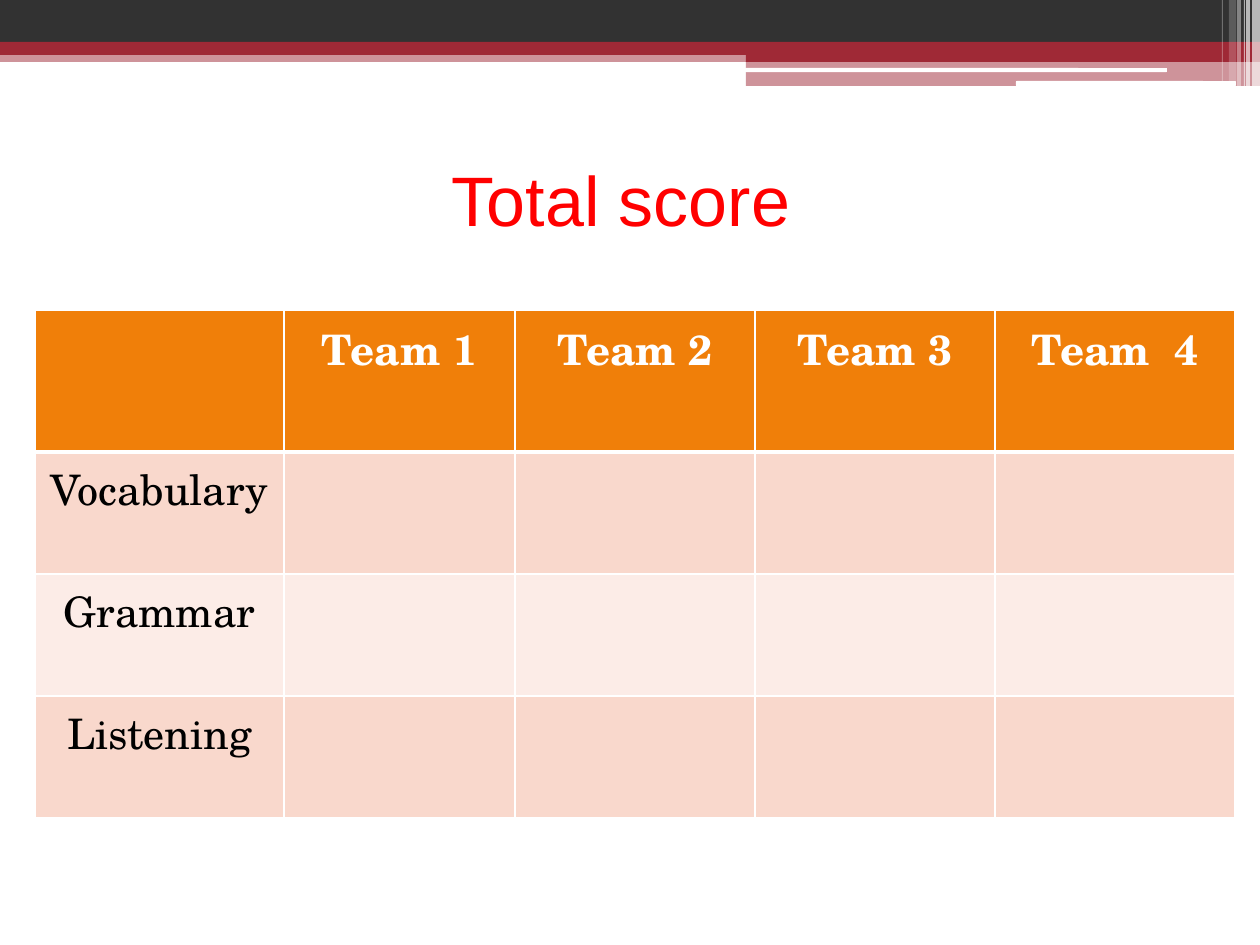
"""Build the total score slide with its banner and team table."""
from typing import NamedTuple

from lxml.etree import SubElement
from pptx import Presentation
from pptx.dml.color import RGBColor
from pptx.enum.shapes import MSO_SHAPE as Preset
from pptx.enum.text import MSO_ANCHOR as Anchor, PP_ALIGN as Align
from pptx.oxml.ns import qn
from pptx.util import Emu, Pt

COLORS = {
    "dark": "323232", "crimson": "9F2936", "white": "FFFFFF", "black": "000000",
    "red": "FF0000", "orange": "F07F09", "peach": "F9D8CC", "blush": "FCECE7",
}
TABLE_FONT = "TeX Gyre Schola"
COLUMN_WIDTHS = [249, 231, 240, 240, 240]
ROW_HEIGHTS = [142, 122, 122, 122]
TEAMS = ["", "Team 1", "Team 2", "Team 3", "Team  4"]
SKILLS = ["Vocabulary", "Grammar", "Listening"]


class Band(NamedTuple):
    left: int
    top: int
    width: int
    height: int
    color: str
    opacity: int = 100
    preset: Preset = Preset.RECTANGLE


BANNER = [
    Band(0, 50, 1260, 12, "crimson", 50),
    Band(0, 0, 1260, 43, "dark"),
    Band(0, 42, 1260, 13, "crimson"),
    Band(746, 49, 514, 13, "crimson"),
    Band(746, 61, 514, 25, "crimson", 50),
    Band(745, 68, 422, 4, "white", preset=Preset.ROUNDED_RECTANGLE),
    Band(1016, 81, 220, 5, "white", preset=Preset.ROUNDED_RECTANGLE),
    Band(1252, 0, 8, 86, "white", 65),
    Band(1246, 0, 4, 86, "white", 65),
    Band(1244, 0, 1, 86, "white", 60),
    Band(1237, 0, 4, 86, "white", 40),
    Band(1229, 0, 7, 81, "white", 20),
    Band(1222, 0, 1, 81, "white", 30),
]


def px(length: int) -> Emu:
    return Emu(round(length * 914400 / 126))


def rgb(color: str) -> RGBColor:
    return RGBColor.from_string(COLORS[color])


def draw_band(slide, band: Band) -> None:
    shape = slide.shapes.add_shape(band.preset, *map(px, band[:4]))
    shape.shadow.inherit = False
    shape.line.fill.background()
    shape.fill.solid()
    shape.fill.fore_color.rgb = rgb(band.color)
    if band.opacity < 100:
        color = shape.fill._xPr.find(f".//{qn('a:srgbClr')}")
        SubElement(color, qn("a:alpha"), val=str(band.opacity * 1000))


def write(frame, text: str, font: str, size: int, color: str, bold: bool) -> None:
    frame.text = text
    paragraph = frame.paragraphs[0]
    paragraph.alignment = Align.CENTER
    for run in paragraph.runs:
        run.font.name = font
        run.font.size = Pt(size)
        run.font.bold = bold
        run.font.color.rgb = rgb(color)


def draw_borders(cell, bottom: int, top: int) -> None:
    properties = cell._tc.get_or_add_tcPr()
    for side, width in (("L", 1), ("R", 1), ("T", top), ("B", bottom)):
        border = SubElement(properties, qn(f"a:ln{side}"), w=str(Pt(width)))
        fill = SubElement(border, qn("a:solidFill"))
        SubElement(fill, qn("a:srgbClr"), val=COLORS["white"])


def draw_scores(slide) -> None:
    rows = [TEAMS] + [[skill] + [""] * (len(TEAMS) - 1) for skill in SKILLS]
    scores = slide.shapes.add_table(
        len(rows), len(TEAMS), px(35), px(310),
        px(sum(COLUMN_WIDTHS)), px(sum(ROW_HEIGHTS)),
    ).table
    for column, width in zip(scores.columns, COLUMN_WIDTHS):
        column.width = px(width)
    for index, (row, height) in enumerate(zip(scores.rows, ROW_HEIGHTS)):
        row.height = px(height)
        heading = index == 0
        background = "orange" if heading else "peach" if index % 2 else "blush"
        for cell, text in zip(row.cells, rows[index]):
            draw_borders(cell, 3 if heading else 1, 3 if index == 1 else 1)
            cell.fill.solid()
            cell.fill.fore_color.rgb = rgb(background)
            write(cell.text_frame, text, TABLE_FONT, 24,
                  "white" if heading else "black", heading)


def main() -> None:
    deck = Presentation()
    deck.slide_width, deck.slide_height = px(1260), px(945)
    slide = deck.slides.add_slide(deck.slide_layouts[5])
    for band in BANNER:
        draw_band(slide, band)
    title = slide.shapes.title
    title.left, title.top, title.width, title.height = map(px, (54, 125, 1134, 147))
    title.text_frame.vertical_anchor = Anchor.MIDDLE
    write(title.text_frame, "Total score", "Arial", 40, "red", False)
    draw_scores(slide)
    deck.save("out.pptx")


if __name__ == "__main__":
    main()
